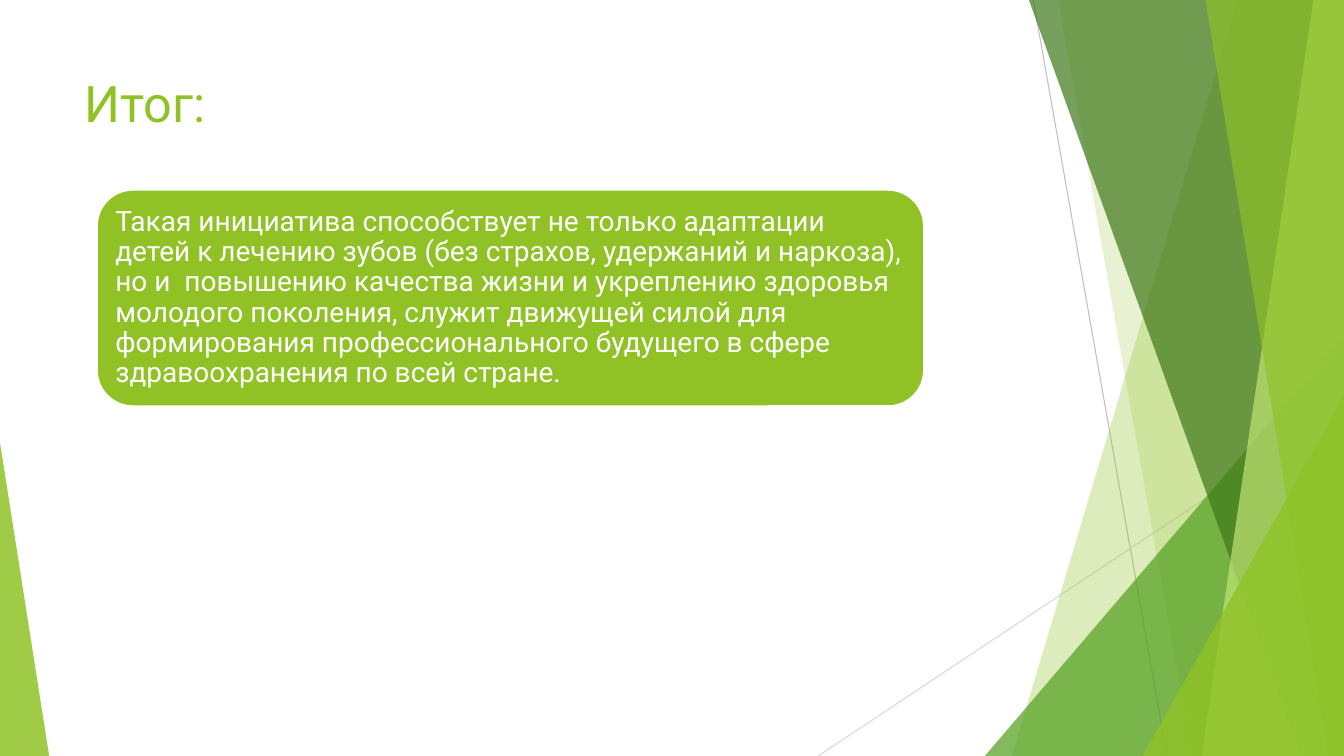
from lxml import etree
from pptx import Presentation
from pptx.dml.color import RGBColor
from pptx.enum import shapes, text
from pptx.oxml import ns
from pptx.util import Cm, Pt

LIME = RGBColor(0x90, 0xC2, 0x26)
PALE_LIME = RGBColor(0xC0, 0xE4, 0x74)
GREEN = RGBColor(0x54, 0xA0, 0x21)
DARK_GREEN = RGBColor(0x3F, 0x78, 0x19)
GRAY = RGBColor(0xBF, 0xBF, 0xBF)
LIGHT_GRAY = RGBColor(0xD9, 0xD9, 0xD9)
WHITE = RGBColor(0xFF, 0xFF, 0xFF)

WIDTH, HEIGHT = 33.87, 19.05


def write_text(shape, content, size, color, anchor, spacing=1.0):
    frame = shape.text_frame
    frame.word_wrap = True
    frame.auto_size = text.MSO_AUTO_SIZE.NONE
    frame.vertical_anchor = anchor
    paragraph = frame.paragraphs[0]
    paragraph.text = content
    paragraph.alignment = text.PP_ALIGN.LEFT
    paragraph.line_spacing = spacing
    paragraph.font.name = "Roboto"
    paragraph.font.size = Pt(size)
    paragraph.font.color.rgb = color
    return frame


def paint_facet(shape, color, opacity):
    shape.shadow.inherit = False
    shape.line.fill.background()
    shape.fill.solid()
    shape.fill.fore_color.rgb = color
    fill_color = shape.fill._xPr.find(ns.qn("a:solidFill"))[0]
    etree.SubElement(fill_color, ns.qn("a:alpha"), val=str(opacity * 1000))


presentation = Presentation()
presentation.slide_width = Cm(WIDTH)
presentation.slide_height = Cm(HEIGHT)
slide = presentation.slides.add_slide(presentation.slide_layouts[5])

# Thin lines behind the facets
for x1, y1, x2, y2, color in [
    (26.04, 0, 29.41, HEIGHT, GRAY),
    (WIDTH, 10.24, 20.62, HEIGHT, LIGHT_GRAY),
]:
    line = slide.shapes.add_connector(
        shapes.MSO_CONNECTOR.STRAIGHT, Cm(x1), Cm(y1), Cm(x2), Cm(y2))
    line.line.color.rgb = color
    line.line.width = Pt(0.75)
    etree.SubElement(line._element.spPr, ns.qn("a:effectLst"))

# Facets: bands reach the right edge, triangles stand on the bottom edge
facets = [
    ("band", (31.19, 25.5), LIME, 30),
    ("band", (26.67, 30.05), LIME, 20),
    ("triangle", (24.82, 8.46, WIDTH, 1), GREEN, 72),
    ("band", (25.93, 32.79), DARK_GREEN, 70),
    ("band", (33.1, 30.28), PALE_LIME, 70),
    ("band", (30.38, 33.48), LIME, 65),
    ("triangle", (28.8, 9.98, WIDTH, 1), LIME, 80),
    ("triangle", (0, 11.15, 1.24, 0), LIME, 85),
]
for kind, geometry, color, opacity in facets:
    if kind == "band":
        top_x, bottom_x = geometry
        builder = slide.shapes.build_freeform(Cm(top_x), Cm(0))
        builder.add_line_segments(
            [(Cm(x), Cm(y)) for x, y in
             [(WIDTH, 0), (WIDTH, HEIGHT), (bottom_x, HEIGHT)]], close=True)
        facet = builder.convert_to_shape()
    else:
        left, top, right, apex = geometry
        facet = slide.shapes.add_shape(
            shapes.MSO_SHAPE.ISOSCELES_TRIANGLE,
            Cm(left), Cm(top), Cm(right - left), Cm(HEIGHT - top))
        facet.adjustments[0] = apex
    paint_facet(facet, color, opacity)

# Title, placed in front of the facets
title = slide.shapes.title
title.left, title.top = Cm(1.88), Cm(1.7)
title.width, title.height = Cm(23.88), Cm(3.66)
write_text(title, "Итог:", 36, LIME, text.MSO_ANCHOR.TOP)
slide.shapes._spTree.append(title._element)

# Conclusion card
card = slide.shapes.add_shape(
    shapes.MSO_SHAPE.ROUNDED_RECTANGLE, Cm(2.44), Cm(4.78), Cm(20.85), Cm(5.46))
card.shadow.inherit = False
card.fill.solid()
card.fill.fore_color.rgb = LIME
card.line.color.rgb = WHITE
card.line.width = Pt(1.5)
card_frame = write_text(
    card,
    "Такая инициатива способствует не только адаптации детей к лечению зубов "
    "(без страхов, удержаний и наркоза), но и  повышению качества жизни и "
    "укреплению здоровья молодого поколения, служит движущей силой для "
    "формирования профессионального будущего в сфере здравоохранения по всей "
    "стране.",
    20, WHITE, text.MSO_ANCHOR.MIDDLE, spacing=0.9)
card_frame.margin_left = card_frame.margin_right = Cm(0.2)
card_frame.margin_top = card_frame.margin_bottom = Cm(0.2)

presentation.save("out.pptx")
